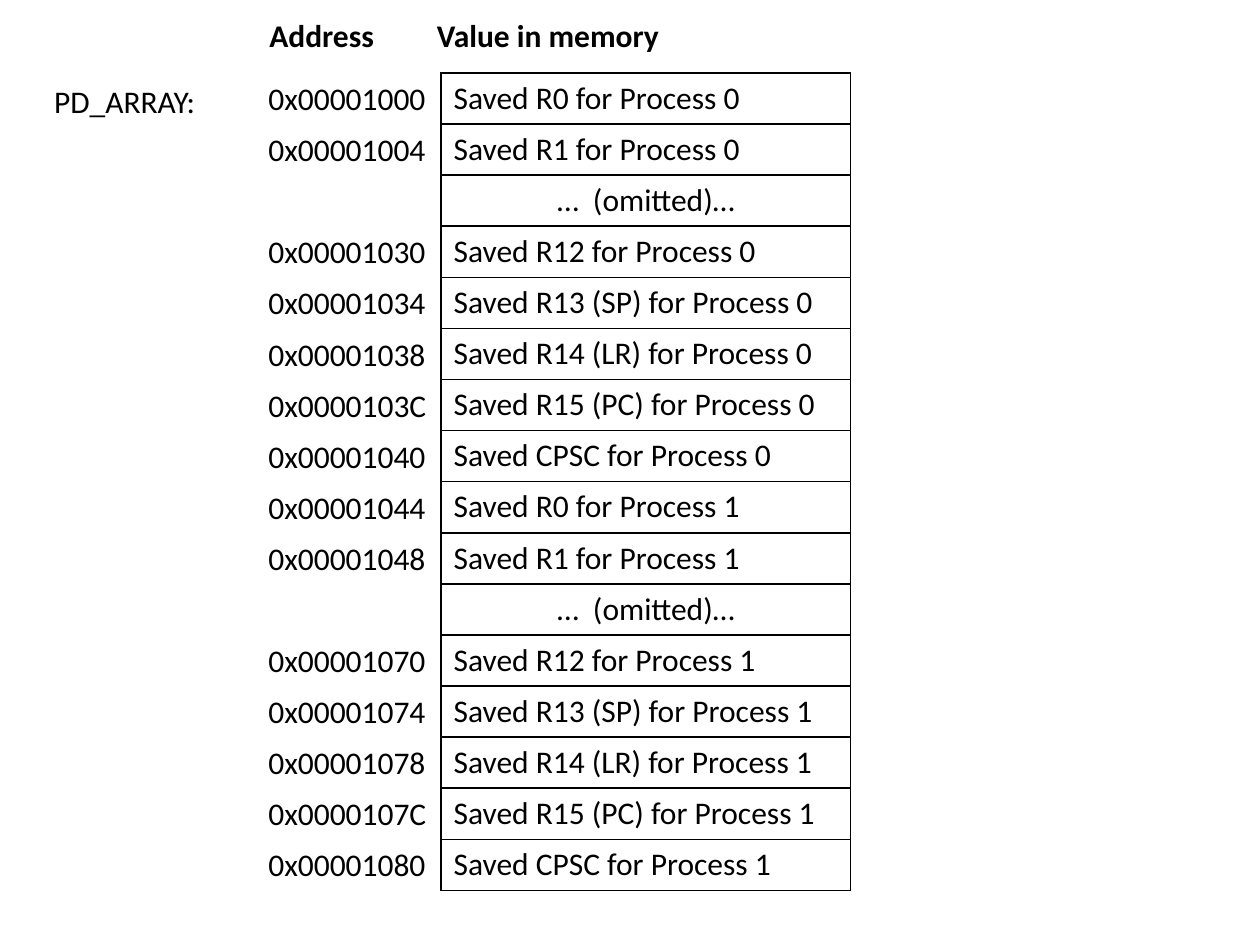
from lxml import etree
from pptx import Presentation
from pptx.dml.color import RGBColor
from pptx.enum.text import MSO_AUTO_SIZE, PP_ALIGN
from pptx.oxml.ns import qn
from pptx.util import Cm, Pt

BLACK = RGBColor(0, 0, 0)
FONT = "Calibri"
LEFT, CENTER = PP_ALIGN.LEFT, PP_ALIGN.CENTER
FIT_SHAPE = MSO_AUTO_SIZE.SHAPE_TO_FIT_TEXT

OMITTED = "…  (omitted)…"
REGISTERS = ["R0", "R1", None, "R12", "R13 (SP)", "R14 (LR)", "R15 (PC)", "CPSC"]
PROCESS_ADDRESSES = [
    ["0x00001000", "0x00001004", None, "0x00001030",
     "0x00001034", "0x00001038", "0x0000103C", "0x00001040"],
    ["0x00001044", "0x00001048", None, "0x00001070",
     "0x00001074", "0x00001078", "0x0000107C", "0x00001080"],
]

# Lengths in centimetres
TABLE_LEFT, TABLE_TOP, TABLE_WIDTH = 8.89, 1.47, 8.26
ROW_HEIGHT = 1.03
ADDRESS_LEFT, ADDRESS_WIDTH = 5.16, 3.71
LABEL_HEIGHT = 1.03
VALUE_TAB = 3.38


def add_run(paragraph, text, bold=False):
    run = paragraph.add_run()
    run.text = text
    run.font.name = FONT
    run.font.size = Pt(18)
    run.font.bold = bold
    run.font.color.rgb = BLACK


def add_label(slide, left, top, width, text, bold=False, wrap=False):
    box = slide.shapes.add_textbox(Cm(left), Cm(top), Cm(width), Cm(LABEL_HEIGHT))
    frame = box.text_frame
    frame.word_wrap = wrap
    frame.auto_size = FIT_SHAPE
    add_run(frame.paragraphs[0], text, bold)
    return box


def add_tab_stop(paragraph, position):
    properties = paragraph._p.get_or_add_pPr()
    tabs = etree.SubElement(properties, qn("a:tabLst"))
    etree.SubElement(tabs, qn("a:tab"), pos=str(Cm(position)), algn="l")


def add_borders(cell):
    properties = cell._tc.get_or_add_tcPr()
    for side in ("lnL", "lnR", "lnT", "lnB"):
        line = etree.SubElement(properties, qn("a:" + side), w=str(Pt(1)))
        fill = etree.SubElement(line, qn("a:solidFill"))
        etree.SubElement(fill, qn("a:srgbClr"), val=str(BLACK))


def add_process_table(slide, process, top):
    count = len(REGISTERS)
    table = slide.shapes.add_table(
        count, 1, Cm(TABLE_LEFT), Cm(top), Cm(TABLE_WIDTH), Cm(ROW_HEIGHT * count)
    ).table
    table.first_row = False
    table.horz_banding = False
    for row, register in enumerate(REGISTERS):
        table.rows[row].height = Cm(ROW_HEIGHT)
        cell = table.cell(row, 0)
        add_borders(cell)
        cell.fill.background()
        paragraph = cell.text_frame.paragraphs[0]
        paragraph.alignment = LEFT if register else CENTER
        text = f"Saved {register} for Process {process}" if register else OMITTED
        add_run(paragraph, text)


def main():
    presentation = Presentation()
    presentation.slide_width, presentation.slide_height = Cm(25.4), Cm(19.05)
    slide = presentation.slides.add_slide(presentation.slide_layouts[6])

    heading = add_label(slide, 5.18, 0.2, 11.89, "Address\tValue in memory",
                        bold=True, wrap=True)
    add_tab_stop(heading.text_frame.paragraphs[0], VALUE_TAB)
    add_label(slide, 0.84, 1.52, 3.38, "PD_ARRAY:")

    for process, addresses in enumerate(PROCESS_ADDRESSES):
        top = TABLE_TOP + process * len(REGISTERS) * ROW_HEIGHT
        add_process_table(slide, process, top)
        for row, address in enumerate(addresses):
            if address:
                add_label(slide, ADDRESS_LEFT, top + row * ROW_HEIGHT,
                          ADDRESS_WIDTH, address)

    presentation.save("out.pptx")


if __name__ == "__main__":
    main()
